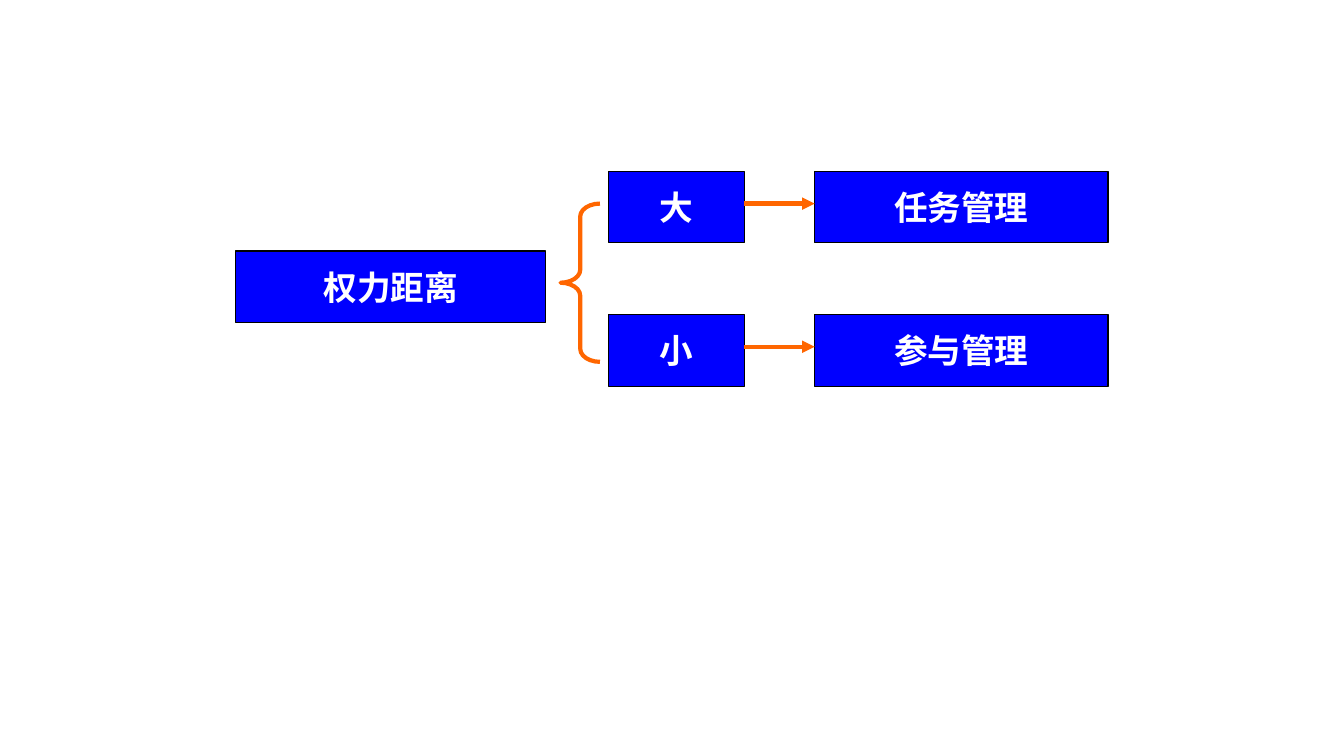
"""Build a slide that links power distance to management style."""
from dataclasses import dataclass
from pptx import Presentation
from pptx.dml.color import RGBColor as Rgb
from pptx.enum.shapes import MSO_CONNECTOR as Link, MSO_SHAPE as Form
from pptx.enum.text import MSO_ANCHOR as Anchor, PP_ALIGN as Align
from pptx.oxml.ns import qn
from pptx.util import Inches, Pt
from lxml.etree import SubElement

ROOT = "权力距离"
ROWS = [("大", "任务管理"), ("小", "参与管理")]

COLS = {"root": (2.34, 3.07), "brace": (5.56, 0.39), "level": (6.04, 1.34), "style": (8.08, 2.91)}
TOP, HIGH = 1.7, 0.71
PITCH = 2 * HIGH
ROOT_TOP = 2.49
AIM = 0.32
SPAN = 1.57


@dataclass(frozen=True)
class Theme:
    fill: Rgb = Rgb(0, 0, 255)
    edge: Rgb = Rgb(0, 0, 0)
    text: Rgb = Rgb(255, 255, 255)
    accent: Rgb = Rgb(255, 102, 0)
    font: str = "Arial"
    size: float = 24
    thin: float = 0.75
    thick: float = 3


LOOK = Theme()


def stroke(item, color, width):
    item.line.color.rgb = color
    item.line.width = Pt(width)


def place(slide, form, col, top, high):
    left, width = COLS[col]
    shape = slide.shapes.add_shape(form, *map(Inches, (left, top, width, high)))
    shape.shadow.inherit = False
    return shape


def add_box(slide, col, top, text):
    box = place(slide, Form.RECTANGLE, col, top, HIGH)
    box.fill.solid()
    box.fill.fore_color.rgb = LOOK.fill
    stroke(box, LOOK.edge, LOOK.thin)
    frame = box.text_frame
    frame.word_wrap = False
    frame.vertical_anchor = Anchor.MIDDLE
    para = frame.paragraphs[0]
    para.text = text
    para.alignment = Align.CENTER
    font = para.font
    font.name, font.size, font.bold = LOOK.font, Pt(LOOK.size), True
    font.color.rgb = LOOK.text


def add_brace(slide):
    brace = place(slide, Form.LEFT_BRACE, "brace", TOP + AIM, SPAN)
    brace.adjustments[0] = 0.331
    brace.fill.background()
    stroke(brace, LOOK.accent, LOOK.thick)


def add_arrow(slide, y):
    start, end = sum(COLS["level"]), COLS["style"][0]
    arrow = slide.shapes.add_connector(Link.STRAIGHT, *map(Inches, (start, y, end, y)))
    stroke(arrow, LOOK.accent, LOOK.thick)
    SubElement(arrow.line._get_or_add_ln(), qn("a:tailEnd"), type="triangle")
    SubElement(arrow._element.spPr, qn("a:effectLst"))


def main():
    deck = Presentation()
    deck.slide_width, deck.slide_height = Inches(13.33), Inches(7.5)
    slide = deck.slides.add_slide(deck.slide_layouts[6])
    add_box(slide, "root", ROOT_TOP, ROOT)
    add_brace(slide)
    for row, (level, style) in enumerate(ROWS):
        top = TOP + row * PITCH
        add_box(slide, "level", top, level)
        add_box(slide, "style", top, style)
        add_arrow(slide, top + AIM)
    deck.save("out.pptx")


if __name__ == "__main__":
    main()
